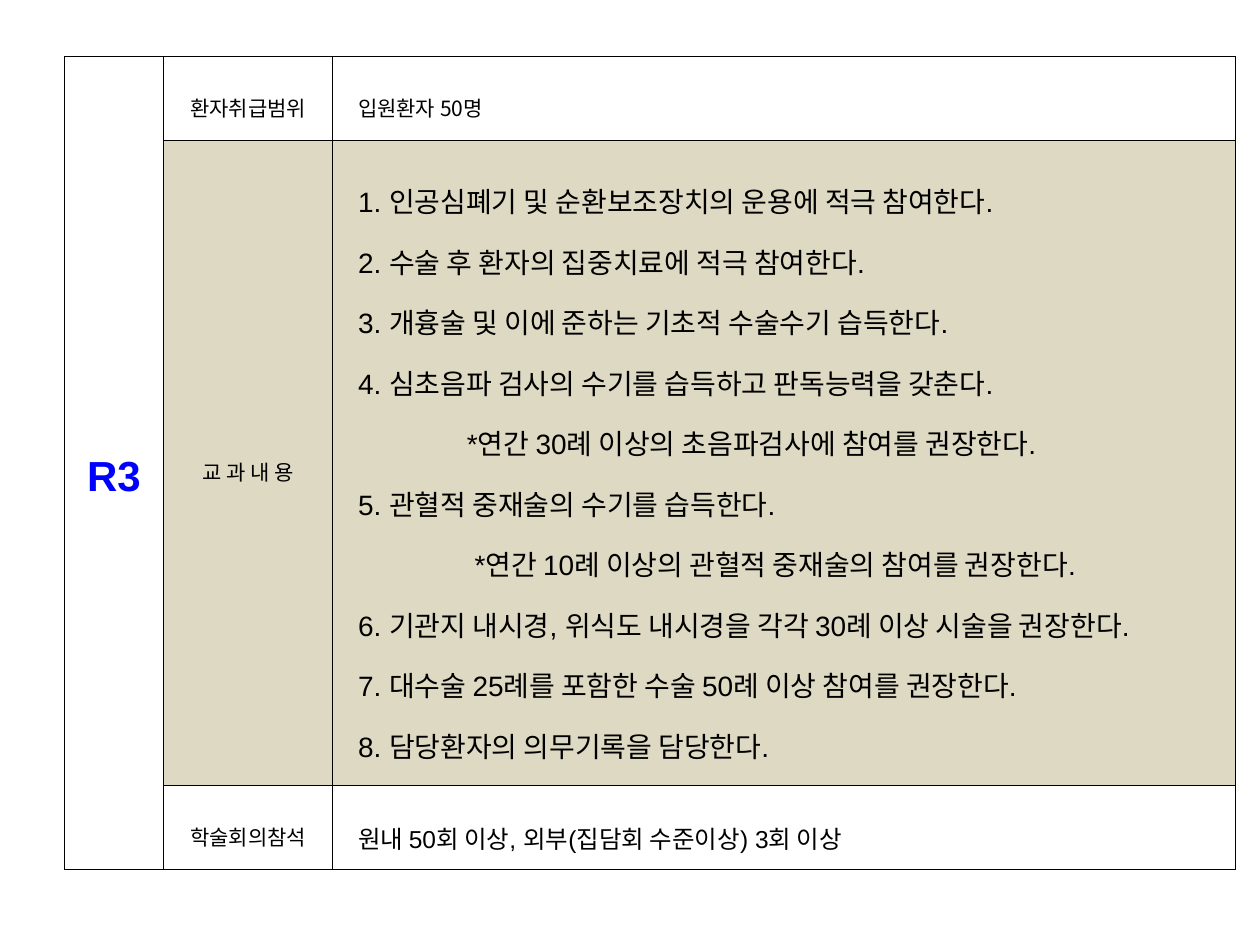
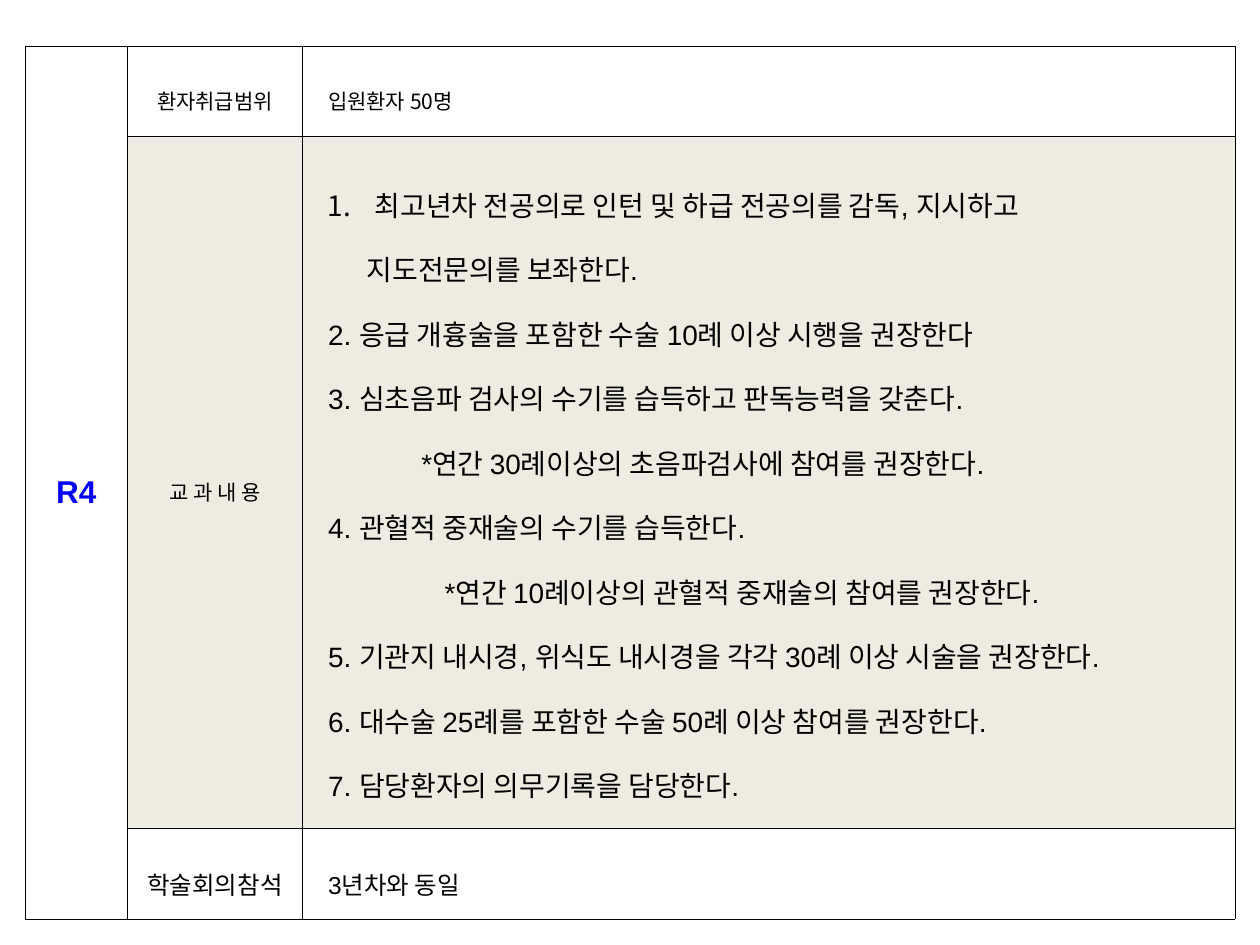
"""Builds two slides, each with the training table of one residency year."""
from dataclasses import dataclass

from lxml import etree
from pptx import Presentation
from pptx.dml.color import RGBColor
from pptx.enum.text import MSO_ANCHOR, PP_ALIGN
from pptx.oxml.ns import qn
from pptx.util import Pt

CENTER, JUSTIFY = PP_ALIGN.CENTER, PP_ALIGN.JUSTIFY
MIDDLE = MSO_ANCHOR.MIDDLE
LATIN, KOREAN = "Arial", "Noto Sans CJK KR"
COLORS = {"text": "000000", "year": "0000FF", "plain": "FFFFFF",
          "r3": "DDD9C3", "r4": "EEECE1"}
INDENT = 10.1
BORDER = 0.28


@dataclass
class Line:
    """One paragraph with its left margin and first-line offset in points."""
    text: str
    margin: float = INDENT
    hanging: float = 0
    numbered: bool = False


@dataclass
class Style:
    """The look of the text and background of a cell."""
    size: float
    font: str = KOREAN
    color: str = "text"
    fill: str = "plain"
    align: int = CENTER
    spacing: float = 1.6
    bold: bool = False


@dataclass
class Year:
    """The table of one residency year, lengths in points."""
    name: str
    left: float
    top: float
    cols: tuple
    rows: tuple
    name_size: float
    fill: str
    spacing: float
    meeting_style: Style
    meetings: str
    lessons: list


YEARS = [
    Year("R3", 36.8, 32, (56.7, 96.6, 516), (48.1, 368.6, 48.1), 24, "r3", 1.5,
         Style(12), "원내 50회 이상, 외부(집담회 수준이상) 3회 이상", [
             Line("1. 인공심폐기 및 순환보조장치의 운용에 적극 참여한다."),
             Line("2. 수술 후 환자의 집중치료에 적극 참여한다."),
             Line("3. 개흉술 및 이에 준하는 기초적 수술수기 습득한다."),
             Line("4. 심초음파 검사의 수기를 습득하고 판독능력을 갖춘다."),
             Line("*연간 30례 이상의 초음파검사에 참여를 권장한다.", 72.3),
             Line("5. 관혈적 중재술의 수기를 습득한다."),
             Line("*연간 10례 이상의 관혈적 중재술의 참여를 권장한다.", 76.7),
             Line("6. 기관지 내시경, 위식도 내시경을 각각 30례 이상 시술을 권장한다."),
             Line("7. 대수술 25례를 포함한 수술 50례 이상 참여를 권장한다."),
             Line("8. 담당환자의 의무기록을 담당한다."),
         ]),
    Year("R4", 14.4, 26.2, (58.4, 100.1, 533), (51.8, 395.3, 51.8), 18, "r4", 1.6,
         Style(14, LATIN), "3년차와 동일", [
             Line("최고년차 전공의로 인턴 및 하급 전공의를 감독, 지시하고",
                  36.9, -27, True),
             Line("지도전문의를 보좌한다.", 32.3),
             Line("2. 응급 개흉술을 포함한 수술 10례 이상 시행을 권장한다"),
             Line("3. 심초음파 검사의 수기를 습득하고 판독능력을 갖춘다."),
             Line("*연간 30례이상의 초음파검사에 참여를 권장한다.", 63.4),
             Line("4. 관혈적 중재술의 수기를 습득한다."),
             Line("*연간 10례이상의 관혈적 중재술의 참여를 권장한다.", 76.7),
             Line("5. 기관지 내시경, 위식도 내시경을 각각 30례 이상 시술을 권장한다."),
             Line("6. 대수술 25례를 포함한 수술 50례 이상 참여를 권장한다."),
             Line("7. 담당환자의 의무기록을 담당한다."),
         ]),
]


def draw_borders(cell) -> None:
    """Outline a cell with thin black lines."""
    tc_pr = cell._tc.get_or_add_tcPr()
    for side in ("a:lnL", "a:lnR", "a:lnT", "a:lnB"):
        ln = etree.SubElement(tc_pr, qn(side), w=str(Pt(BORDER)))
        fill = etree.SubElement(ln, qn("a:solidFill"))
        etree.SubElement(fill, qn("a:srgbClr"), val=COLORS["text"])


def format_paragraph(p, line: Line, style: Style) -> None:
    """Write one line and apply its paragraph and run formatting."""
    p.text = line.text
    p.alignment = style.align
    p.line_spacing = style.spacing
    p_pr = p._p.get_or_add_pPr()
    p_pr.set("marL", str(Pt(line.margin)))
    p_pr.set("indent", str(Pt(line.hanging)))
    if line.numbered:
        etree.SubElement(p_pr, qn("a:buFont"), typeface=KOREAN)
        etree.SubElement(p_pr, qn("a:buAutoNum"), type="arabicPeriod")
    for r in p.runs:
        r.font.size = Pt(style.size)
        r.font.name = style.font
        r.font.bold = style.bold
        r.font.color.rgb = RGBColor.from_string(COLORS[style.color])
        etree.SubElement(r._r.get_or_add_rPr(), qn("a:ea"), typeface=KOREAN)


def fill_cell(cell, lines: list[Line], style: Style) -> None:
    """Set the background, margins and lines of a cell."""
    cell.fill.solid()
    cell.fill.fore_color.rgb = RGBColor.from_string(COLORS[style.fill])
    cell.margin_left = cell.margin_right = Pt(4.5)
    cell.margin_top = cell.margin_bottom = Pt(2.2)
    cell.vertical_anchor = MIDDLE
    tf = cell.text_frame
    for i, line in enumerate(lines):
        p = tf.add_paragraph() if i else tf.paragraphs[0]
        format_paragraph(p, line, style)


def add_year(prs, year: Year) -> None:
    """Add a slide with the table of one year."""
    s = prs.slides.add_slide(prs.slide_layouts[6])
    table = s.shapes.add_table(
        len(year.rows), len(year.cols), Pt(year.left), Pt(year.top),
        Pt(sum(year.cols)), Pt(sum(year.rows))).table
    table.first_row = table.horz_banding = False
    for col, width in zip(table.columns, year.cols):
        col.width = Pt(width)
    for row, height in zip(table.rows, year.rows):
        row.height = Pt(height)
    for cell in table.iter_cells():
        draw_borders(cell)

    table.cell(0, 0).merge(table.cell(2, 0))
    fill_cell(table.cell(0, 0), [Line(year.name, 0)],
              Style(year.name_size, LATIN, "year", bold=True))
    content = [
        ("환자취급범위", Style(12), [Line("입원환자 50명")], Style(12, align=JUSTIFY)),
        ("교 과 내 용", Style(12, fill=year.fill), year.lessons,
         Style(16, LATIN, fill=year.fill, align=JUSTIFY, spacing=year.spacing)),
        ("학술회의참석", year.meeting_style, [Line(year.meetings)],
         Style(14, LATIN, align=JUSTIFY)),
    ]
    for i, (label, label_style, lines, style) in enumerate(content):
        fill_cell(table.cell(i, 1), [Line(label, 0)], label_style)
        fill_cell(table.cell(i, 2), lines, style)


def main() -> None:
    """Build and save the presentation."""
    prs = Presentation()
    prs.slide_width, prs.slide_height = Pt(720), Pt(540)
    for year in YEARS:
        add_year(prs, year)
    prs.save("out.pptx")


if __name__ == "__main__":
    main()
